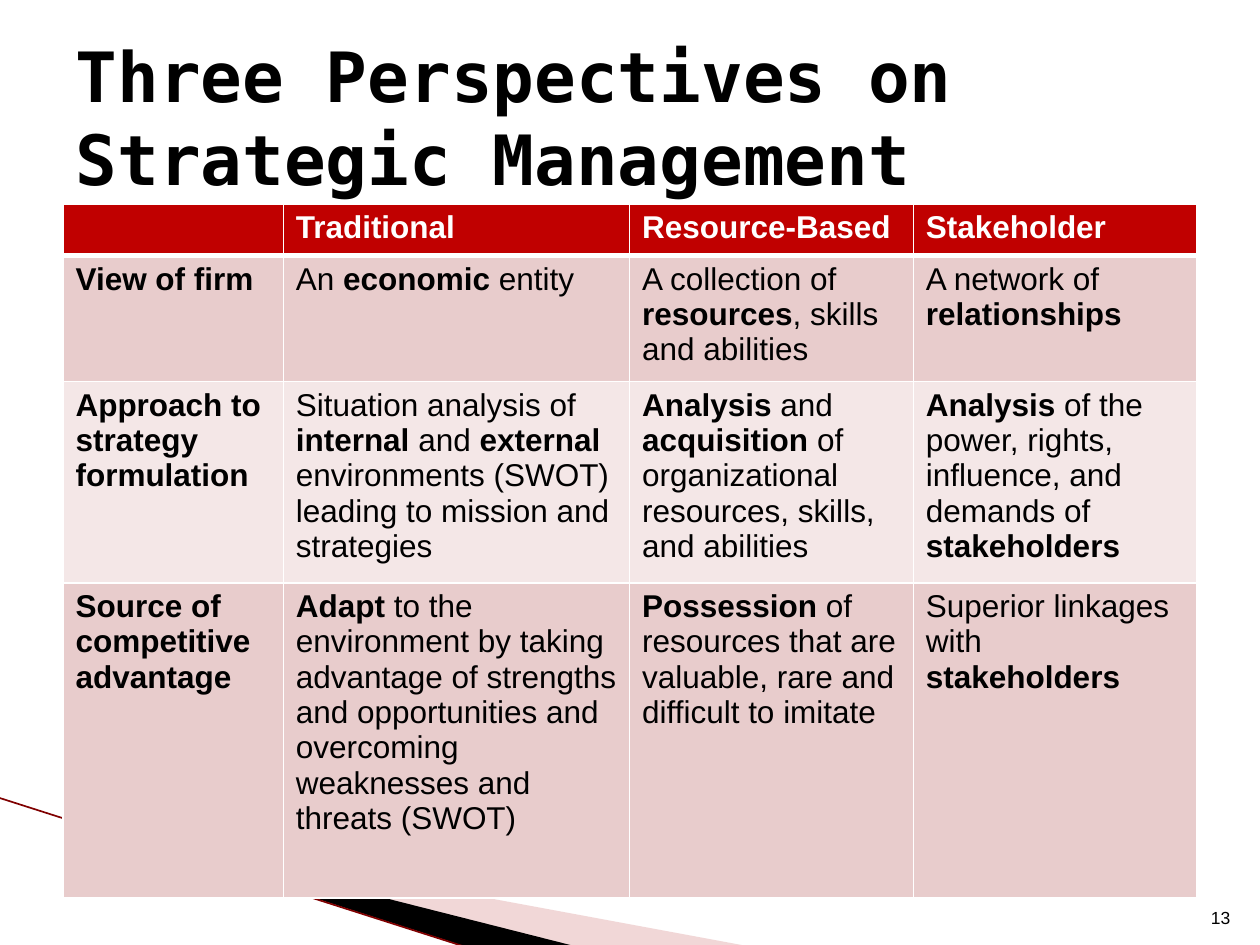
from dataclasses import dataclass

from lxml.etree import SubElement
from pptx import Presentation
from pptx.dml.color import RGBColor
from pptx.enum.shapes import MSO_CONNECTOR
from pptx.enum.text import MSO_ANCHOR, PP_ALIGN
from pptx.oxml.ns import qn
from pptx.util import Cm, Pt


@dataclass(frozen=True)
class Theme:
    black: str = "000000"
    white: str = "FFFFFF"
    header: str = "C00000"
    bands: tuple[str, str] = ("E8CCCC", "F4E7E7")
    wedge: str = "DD9D9D"
    edge: str = "800000"
    body_font: str = "Arial"
    title_font: str = "DejaVu Sans Mono"
    title_size: float = 39.6
    table_size: float = 18
    number_size: float = 10


@dataclass(frozen=True)
class Wedge:
    points: tuple[tuple[float, float], ...]
    color: str
    opacity: int = 100


THEME = Theme()

WEDGES = (
    Wedge(((1.4, 16.54), (15.11, 19.08), (11.58, 19.08), (1.4, 16.51)), THEME.wedge, 40),
    Wedge(((1.35, 16.48), (11.61, 19.08), (9.45, 19.1), (1.37, 16.51)), THEME.black),
)

COLUMN_WIDTHS = (4.44, 6.98, 5.72, 5.72)
ROW_HEIGHTS = (1.04, 2.54, 4.06, 6.35)

# Text between double asterisks is bold.
ROWS = (
    ("", "**Traditional**", "**Resource-Based**", "**Stakeholder**"),
    (
        "**View of firm**",
        "An **economic** entity",
        "A collection of **resources**, skills and abilities",
        "A network of **relationships**",
    ),
    (
        "**Approach to strategy formulation**",
        "Situation analysis of **internal** and **external** environments (SWOT) "
        "leading to mission and strategies",
        "**Analysis** and **acquisition** of organizational resources, skills, and abilities",
        "**Analysis** of the power, rights, influence, and demands of **stakeholders**",
    ),
    (
        "**Source of competitive advantage**",
        "**Adapt** to the environment by taking advantage of strengths and "
        "opportunities and overcoming weaknesses and threats (SWOT)",
        "**Possession** of resources that are valuable, rare and difficult to imitate",
        "Superior linkages with **stakeholders**",
    ),
)


def color_of(value: str) -> RGBColor:
    return RGBColor.from_string(value)


def add_span(para, text: str, font: str, size: float, color: str, bold: bool = False) -> None:
    span = para.add_run()
    span.text = text
    span.font.name = font
    span.font.size = Pt(size)
    span.font.bold = bold
    span.font.color.rgb = color_of(color)


def draw_wedge(page, wedge: Wedge) -> None:
    first, *others = [(Cm(x), Cm(y)) for x, y in wedge.points]
    builder = page.shapes.build_freeform(*first)
    builder.add_line_segments(others, close=True)
    shape = builder.convert_to_shape()
    shape.shadow.inherit = False
    shape.line.fill.background()
    shape.fill.solid()
    shape.fill.fore_color.rgb = color_of(wedge.color)
    if wedge.opacity < 100:
        tone = next(shape.element.spPr.iter(qn("a:srgbClr")))
        SubElement(tone, qn("a:alpha"), val=str(wedge.opacity * 1000))


def draw_edge(page) -> None:
    edge = page.shapes.add_connector(
        MSO_CONNECTOR.STRAIGHT, Cm(-0.03), Cm(16.08), Cm(9.42), Cm(19.1)
    )
    edge.line.color.rgb = color_of(THEME.edge)
    edge.line.width = Pt(0.95)
    SubElement(edge.element.spPr, qn("a:effectLst"))


def set_borders(cell, top: float, bottom: float) -> None:
    """Give the cell white borders; must run before its fill is set."""
    properties = cell._tc.get_or_add_tcPr()
    for side, width in (("L", 1), ("R", 1), ("T", top), ("B", bottom)):
        line = SubElement(properties, qn(f"a:ln{side}"), w=str(Pt(width)))
        SubElement(SubElement(line, qn("a:solidFill")), qn("a:srgbClr"), val=THEME.white)


def fill_cell(cell, text: str, row: int) -> None:
    is_header = row == 0
    set_borders(cell, top=3 if row == 1 else 1, bottom=3 if is_header else 1)
    cell.fill.solid()
    cell.fill.fore_color.rgb = color_of(THEME.header if is_header else THEME.bands[(row - 1) % 2])
    para = cell.text_frame.paragraphs[0]
    color = THEME.white if is_header else THEME.black
    for index, part in enumerate(text.split("**")):
        if part:
            add_span(para, part, THEME.body_font, THEME.table_size, color, bold=index % 2 == 1)


def draw_table(page) -> None:
    table = page.shapes.add_table(
        len(ROWS), len(COLUMN_WIDTHS), Cm(1.27), Cm(4.11),
        Cm(sum(COLUMN_WIDTHS)), Cm(sum(ROW_HEIGHTS)),
    ).table
    for column, width in zip(table.columns, COLUMN_WIDTHS):
        column.width = Cm(width)
    for row, (texts, height) in enumerate(zip(ROWS, ROW_HEIGHTS)):
        table.rows[row].height = Cm(height)
        for column, text in enumerate(texts):
            fill_cell(table.cell(row, column), text, row)


def draw_title(page) -> None:
    title = page.shapes.title
    title.left, title.top, title.width, title.height = Cm(1.27), Cm(0.76), Cm(22.86), Cm(3.18)
    frame = title.text_frame
    frame.word_wrap = True
    frame.vertical_anchor = MSO_ANCHOR.MIDDLE
    para = frame.paragraphs[0]
    para.alignment = PP_ALIGN.LEFT
    add_span(para, "Three Perspectives on Strategic Management",
             THEME.title_font, THEME.title_size, THEME.black, bold=True)


def draw_page_number(page) -> None:
    box = page.shapes.add_textbox(Cm(24.03), Cm(17.81), Cm(1.02), Cm(1.02))
    frame = box.text_frame
    frame.word_wrap = True
    frame.vertical_anchor = MSO_ANCHOR.BOTTOM
    para = frame.paragraphs[0]
    para.alignment = PP_ALIGN.RIGHT
    add_span(para, "13", THEME.body_font, THEME.number_size, THEME.black)


def main() -> None:
    deck = Presentation()
    deck.slide_width, deck.slide_height = Cm(25.4), Cm(19.05)
    page = deck.slides.add_slide(deck.slide_layouts.get_by_name("Title Only"))
    draw_title(page)
    for wedge in WEDGES:
        draw_wedge(page, wedge)
    draw_edge(page)
    draw_table(page)
    draw_page_number(page)
    deck.save("out.pptx")


if __name__ == "__main__":
    main()
